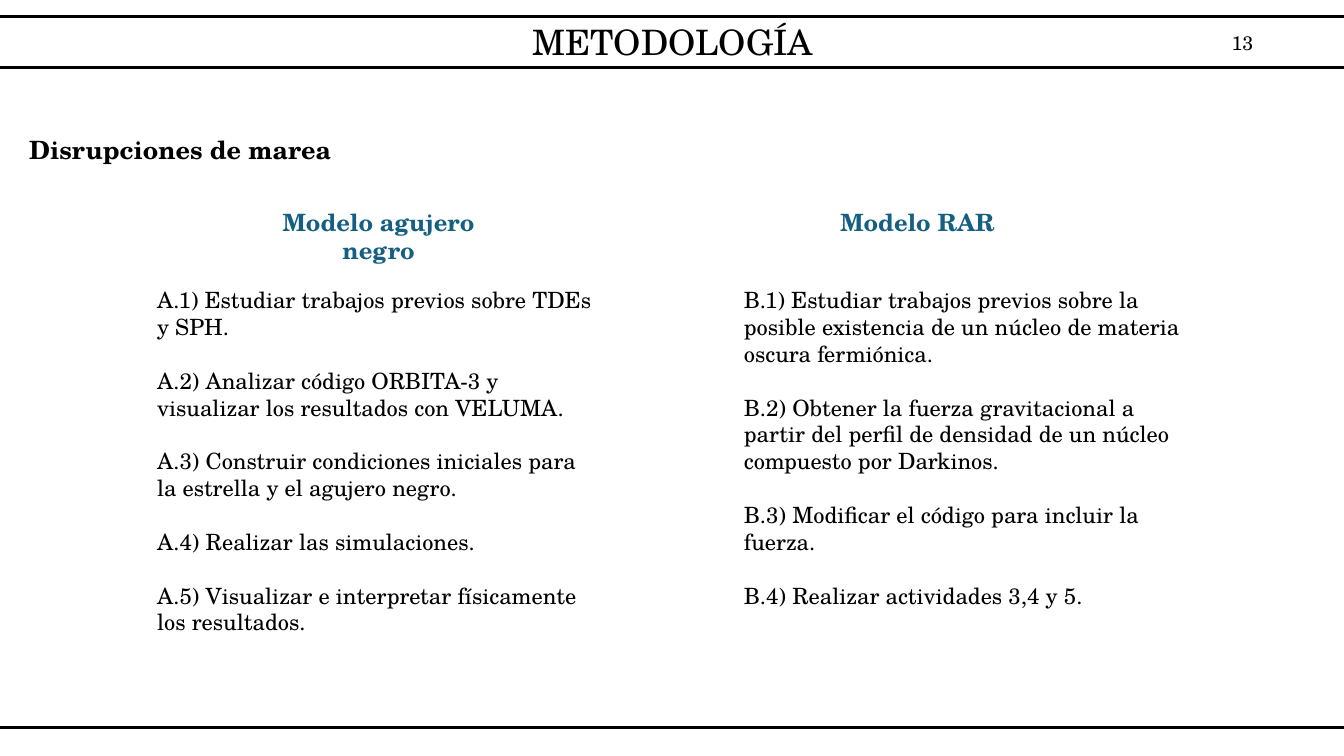
import dataclasses

import pptx
import pptx.dml.color
import pptx.enum.shapes
import pptx.enum.text
import pptx.slide
import pptx.util

Inches = pptx.util.Inches
Align = pptx.enum.text.PP_ALIGN
Anchor = pptx.enum.text.MSO_ANCHOR
AutoSize = pptx.enum.text.MSO_AUTO_SIZE


@dataclasses.dataclass(frozen=True)
class Theme:
    font: str = "TeX Gyre Schola"
    ink: str = "000000"
    accent: str = "156082"
    title_size: float = 25
    section_size: float = 18
    heading_size: float = 17
    step_size: float = 16
    number_size: float = 14
    step_gap: float = 19.2
    rule_width: float = 2.25


@dataclasses.dataclass(frozen=True)
class Frame:
    left: float
    top: float
    width: float
    height: float

    def lengths(self) -> tuple[int, int, int, int]:
        return Inches(self.left), Inches(self.top), Inches(self.width), Inches(self.height)


@dataclasses.dataclass(frozen=True)
class Model:
    heading: str
    heading_frame: Frame
    steps_frame: Frame
    steps: tuple[str, ...]


THEME = Theme()

BAND_TOPS = (0.16, 7.22)

MODELS = (
    Model(
        "Modelo agujero negro",
        Frame(2.34, 2.01, 2.83, 0.39),
        Frame(1.46, 2.79, 4.6, 3.6),
        (
            "A.1) Estudiar trabajos previos sobre TDEs y SPH.",
            "A.2) Analizar código ORBITA-3 y visualizar los resultados con VELUMA.",
            "A.3) Construir condiciones iniciales para la estrella y el agujero negro.",
            "A.4) Realizar las simulaciones.",
            "A.5) Visualizar e interpretar físicamente los resultados.",
        ),
    ),
    Model(
        "Modelo RAR",
        Frame(8.16, 2.01, 1.88, 0.39),
        Frame(7.28, 2.79, 4.6, 3.33),
        (
            "B.1) Estudiar trabajos previos sobre la posible existencia de un núcleo de materia oscura fermiónica.",
            "B.2) Obtener la fuerza gravitacional a partir del perfil de densidad de un núcleo compuesto por Darkinos.",
            "B.3) Modificar el código para incluir la fuerza.",
            "B.4) Realizar actividades 3,4 y 5.",
        ),
    ),
)


def add_band(page: pptx.slide.Slide, top: float) -> None:
    frame = Frame(-0.17, top, 13.67, 0.51)
    band = page.shapes.add_shape(pptx.enum.shapes.MSO_SHAPE.RECTANGLE, *frame.lengths())
    band.shadow.inherit = False
    band.fill.background()
    band.line.color.rgb = pptx.dml.color.RGBColor.from_string(THEME.ink)
    band.line.width = pptx.util.Pt(THEME.rule_width)


def add_text(
    page: pptx.slide.Slide,
    frame: Frame,
    *lines: str,
    size: float,
    color: str = THEME.ink,
    bold: bool = False,
    align: Align = Align.LEFT,
    anchor: Anchor = Anchor.TOP,
    grow: bool = True,
    gap: float = 0,
    line_spacing: float = 1.0,
) -> None:
    box = page.shapes.add_textbox(*frame.lengths())
    body = box.text_frame
    body.word_wrap = True
    body.auto_size = AutoSize.SHAPE_TO_FIT_TEXT if grow else AutoSize.NONE
    body.vertical_anchor = anchor
    for index, line in enumerate(lines):
        para = body.add_paragraph() if index else body.paragraphs[0]
        para.alignment = align
        para.line_spacing = line_spacing
        para.space_before = pptx.util.Pt(gap if index else 0)
        span = para.add_run()
        span.text = line
        span.font.name = THEME.font
        span.font.size = pptx.util.Pt(size)
        span.font.bold = bold
        span.font.color.rgb = pptx.dml.color.RGBColor.from_string(color)


def add_model(page: pptx.slide.Slide, model: Model) -> None:
    add_text(page, model.heading_frame, model.heading, size=THEME.heading_size,
             color=THEME.accent, bold=True, align=Align.CENTER)
    add_text(page, model.steps_frame, *model.steps, size=THEME.step_size, gap=THEME.step_gap)


def main() -> None:
    deck = pptx.Presentation()
    deck.slide_width = Inches(13.33)
    deck.slide_height = Inches(7.5)
    page = deck.slides.add_slide(deck.slide_layouts[6])
    for top in BAND_TOPS:
        add_band(page, top)
    add_text(page, Frame(2.95, 0, 7.44, 0.87), "METODOLOGÍA", size=THEME.title_size,
             align=Align.CENTER, anchor=Anchor.MIDDLE, grow=False, line_spacing=0.9)
    add_text(page, Frame(12.11, 0.22, 0.42, 0.4), "13", size=THEME.number_size,
             align=Align.RIGHT, anchor=Anchor.MIDDLE, grow=False)
    add_text(page, Frame(0.19, 1.28, 3.69, 0.4), "Disrupciones de marea",
             size=THEME.section_size, bold=True)
    for model in MODELS:
        add_model(page, model)
    deck.save("out.pptx")


if __name__ == "__main__":
    main()
